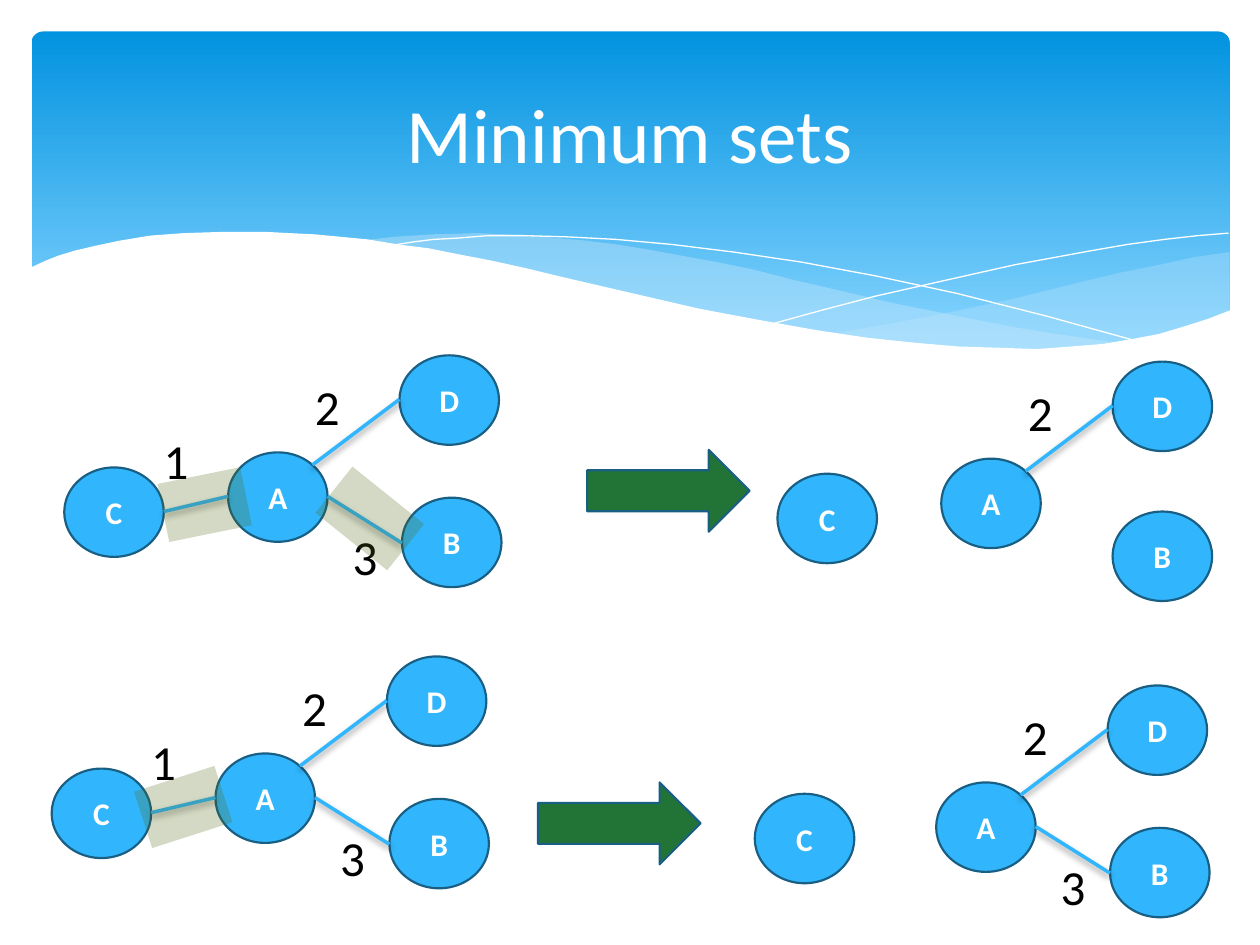
from dataclasses import dataclass

import pptx
import pptx.dml.color
import pptx.enum.shapes
import pptx.enum.text
import pptx.oxml
import pptx.oxml.ns
import pptx.util
from lxml import etree

Inches = pptx.util.Inches
Pt = pptx.util.Pt
SHAPE = pptx.enum.shapes.MSO_SHAPE
ALIGN = pptx.enum.text.PP_ALIGN
ANCHOR = pptx.enum.text.MSO_ANCHOR


@dataclass(frozen=True)
class Theme:
    font: str = "Calibri"
    title_size: int = 44
    label_size: int = 28
    node_size: int = 18
    white: str = "FFFFFF"
    black: str = "000000"
    sky_top: str = "0293E0"
    sky_bottom: str = "83D3FE"
    wave: str = "C6E7FC"
    node: str = "31B6FD"
    outline: str = "195F84"
    arrow: str = "217436"
    highlight: str = "526814"


@dataclass(frozen=True)
class Box:
    left: float
    top: float
    width: float
    height: float

    def inside(self, left, top, width, height):
        return Box(self.left + left, self.top + top, width, height)

    def point(self, x, y):
        return Inches(self.left + x), Inches(self.top + y)

    def lengths(self):
        return [Inches(n) for n in (self.left, self.top, self.width, self.height)]


THEME = Theme()
NODE_WIDTH, NODE_HEIGHT = 0.79, 0.71
NODES = {"C": (-1.3, 0.12), "D": (1.36, -0.77), "A": (0, 0), "B": (1.38, 0.36)}
EDGES = {
    "2": ((0.67, 0.1), (1.36, -0.42), (0.59, -0.65)),
    "3": ((0.79, 0.35), (1.38, 0.72), (0.89, 0.54)),
    "1": ((0, 0.35), (-0.51, 0.47), (-0.61, -0.22)),
}

RIGHT_WAVE = [
    (9.76, 2), (9.48, 2.04), (9.21, 2.1), (8.91, 2.16), (8.61, 2.23), (8.05, 2.37),
    (7.53, 2.48), (7.06, 2.57), (6.61, 2.65), (6.91, 2.69), (7.32, 2.74), (7.69, 2.77),
    (8.03, 2.78), (8.35, 2.77), (8.63, 2.75), (8.89, 2.72), (9.13, 2.67), (9.35, 2.62),
    (9.49, 2.57), (9.63, 2.52), (9.76, 2.47),
]
LONG_WAVE = [
    (8.93, 2.73), (8.66, 2.69), (8.37, 2.65), (8.07, 2.6), (7.75, 2.54), (7.41, 2.47),
    (7.06, 2.4), (6.68, 2.31), (6.29, 2.22), (5.98, 2.14), (5.69, 2.08), (5.41, 2.03),
    (5.14, 1.98), (4.89, 1.94), (4.65, 1.91), (4.42, 1.89), (4.2, 1.87), (3.8, 1.85),
    (3.44, 1.86), (3.13, 1.88), (2.86, 1.91), (3.23, 1.96), (3.62, 2.03), (4.04, 2.11),
    (4.49, 2.22), (4.91, 2.32), (5.3, 2.4), (5.66, 2.48), (6.01, 2.55), (6.34, 2.61),
    (6.65, 2.66), (6.95, 2.7), (7.22, 2.74), (7.48, 2.76), (7.73, 2.77), (7.96, 2.78),
    (8.28, 2.78), (8.57, 2.77), (8.76, 2.75),
]
FALLING_LINE = [
    (3.09, 1.95), (3.28, 1.92), (3.44, 1.9), (3.63, 1.89), (3.87, 1.87), (4.16, 1.87),
    (4.5, 1.88), (4.89, 1.9), (5.33, 1.94), (5.82, 2), (6.36, 2.08), (6.95, 2.19),
    (7.6, 2.33), (8.31, 2.51), (9.07, 2.72),
]
RISING_LINE = [
    (6.13, 2.57), (6.53, 2.46), (6.95, 2.35), (7.48, 2.23), (8.06, 2.1), (8.66, 1.99),
    (8.95, 1.94), (9.24, 1.9), (9.51, 1.87), (9.75, 1.85),
]
LOWER_EDGE = [
    (9.77, 2.46), (9.59, 2.53), (9.4, 2.59), (9.2, 2.65), (8.99, 2.69), (8.75, 2.73),
    (8.5, 2.75), (8.23, 2.77), (7.93, 2.76), (7.61, 2.75), (7.26, 2.72), (6.88, 2.68),
    (6.48, 2.62), (6.03, 2.54), (5.55, 2.45), (5.03, 2.33), (4.47, 2.2), (4.18, 2.13),
    (3.91, 2.07), (3.65, 2.02), (3.4, 1.97), (3.16, 1.94), (2.92, 1.9), (2.71, 1.88),
    (2.5, 1.86), (2.3, 1.85), (2.11, 1.84), (1.77, 1.84), (1.46, 1.85), (1.19, 1.87),
    (0.95, 1.91), (0.76, 1.95), (0.59, 1.99), (0.46, 2.03), (0.36, 2.07), (0.23, 2.13),
    (0.23, 3.29), (9.77, 3.29),
]


def rgb(color):
    return pptx.dml.color.RGBColor.from_string(color)


def paint(shape, fill=None, line=None, width=1.25, opacity=100):
    shape.shadow.inherit = False
    if fill:
        shape.fill.solid()
        shape.fill.fore_color.rgb = rgb(fill)
        if opacity < 100:
            color = shape.fill._xPr.find(".//" + pptx.oxml.ns.qn("a:srgbClr"))
            etree.SubElement(color, pptx.oxml.ns.qn("a:alpha"), val=str(opacity * 1000))
    else:
        shape.fill.background()
    if line:
        shape.line.color.rgb = rgb(line)
        shape.line.width = Pt(width)
    else:
        shape.line.fill.background()


def write(shape, text, size, color, bold=False, align=ALIGN.CENTER, anchor=ANCHOR.MIDDLE):
    shape.text_frame.vertical_anchor = anchor
    para = shape.text_frame.paragraphs[0]
    para.alignment = align
    span = para.add_run()
    span.text = text
    span.font.name = THEME.font
    span.font.size = Pt(size)
    span.font.bold = bold
    span.font.color.rgb = rgb(color)


def add_curve(page, box, points, closed=True, **style):
    start, *rest = [box.point(x, y) for x, y in points]
    builder = page.shapes.build_freeform(*start, scale=1.0)
    builder.add_line_segments(rest, close=closed)
    paint(builder.convert_to_shape(), **style)


def add_header(page, box):
    sky = page.shapes.add_shape(
        SHAPE.ROUNDED_RECTANGLE, *box.inside(0.25, 0.25, 9.51, 2.7).lengths())
    sky.adjustments[0] = 0.034
    paint(sky)
    sky.fill.gradient()
    sky.fill.gradient_angle = 270
    stops = zip(sky.fill.gradient_stops, (0, 0.9), (THEME.sky_top, THEME.sky_bottom))
    for stop, position, color in stops:
        stop.position = position
        stop.color.rgb = rgb(color)
    add_curve(page, box, RIGHT_WAVE, fill=THEME.wave, opacity=29)
    add_curve(page, box, LONG_WAVE, fill=THEME.wave, opacity=40)
    for points in (FALLING_LINE, RISING_LINE):
        add_curve(page, box, points, closed=False, line=THEME.white, width=0)
    add_curve(page, box, LOWER_EDGE, fill=THEME.white)
    title = page.shapes.add_textbox(*box.inside(0.5, 0.37, 9, 1.37).lengths())
    title.text_frame.word_wrap = True
    write(title, "Minimum sets", THEME.title_size, THEME.white)


def add_edge(page, box, start, end):
    edge = page.shapes.add_connector(
        pptx.enum.shapes.MSO_CONNECTOR.STRAIGHT, *box.point(*start), *box.point(*end))
    edge.line.color.rgb = rgb(THEME.node)
    edge.line.width = Pt(2)
    edge._element.spPr.append(pptx.oxml.parse_xml(
        f'<a:effectLst {pptx.oxml.ns.nsdecls("a")}>'
        f'<a:outerShdw blurRad="{Pt(4)}" dist="{Pt(2)}" dir="5400000" rotWithShape="0">'
        f'<a:srgbClr val="{THEME.black}"><a:alpha val="38000"/></a:srgbClr>'
        '</a:outerShdw></a:effectLst>'))


def add_graph(page, box, edges, moved=None, highlights=()):
    for name, place in (NODES | (moved or {})).items():
        node = page.shapes.add_shape(
            SHAPE.OVAL, *box.inside(*place, box.width, box.height).lengths())
        paint(node, THEME.node, THEME.outline)
        write(node, name, THEME.node_size, THEME.white, bold=True)
    for name in edges:
        start, end, place = EDGES[name]
        add_edge(page, box, start, end)
        label = page.shapes.add_textbox(*box.inside(*place, 0.38, 0.57).lengths())
        label.text_frame.word_wrap = False
        write(label, name, THEME.label_size, THEME.black, align=ALIGN.LEFT, anchor=ANCHOR.TOP)
    for left, top, width, angle in highlights:
        mark = page.shapes.add_shape(
            SHAPE.RECTANGLE, *box.inside(left, top, width, 0.47).lengths())
        mark.rotation = angle
        paint(mark, THEME.highlight, opacity=25)


def add_arrow(page, box):
    arrow = page.shapes.add_shape(SHAPE.RIGHT_ARROW, *box.lengths())
    paint(arrow, THEME.arrow, THEME.outline)


def main():
    deck = pptx.Presentation()
    deck.slide_width, deck.slide_height = Inches(10), Inches(7.5)
    page = deck.slides.add_slide(deck.slide_layouts[6])
    add_header(page, Box(0, 0, 10, 3.29))
    graphs = [
        (1.81, 3.59, "231", None, [(-0.52, 0.18, 0.67, 348.5), (0.76, 0.29, 0.73, 38.7)]),
        (7.47, 3.64, "2", {"B": (1.36, 0.42)}, []),
        (1.71, 5.98, "231", None, [(-0.59, 0.19, 0.67, 342.2)]),
        (7.43, 6.21, "23", {"C": (-1.44, 0.09)}, []),
    ]
    for left, top, edges, moved, highlights in graphs:
        add_graph(page, Box(left, top, NODE_WIDTH, NODE_HEIGHT), edges, moved, highlights)
    for left, top in ((4.66, 3.57), (4.27, 6.21)):
        add_arrow(page, Box(left, top, 1.29, 0.65))
    deck.save("out.pptx")


if __name__ == "__main__":
    main()
